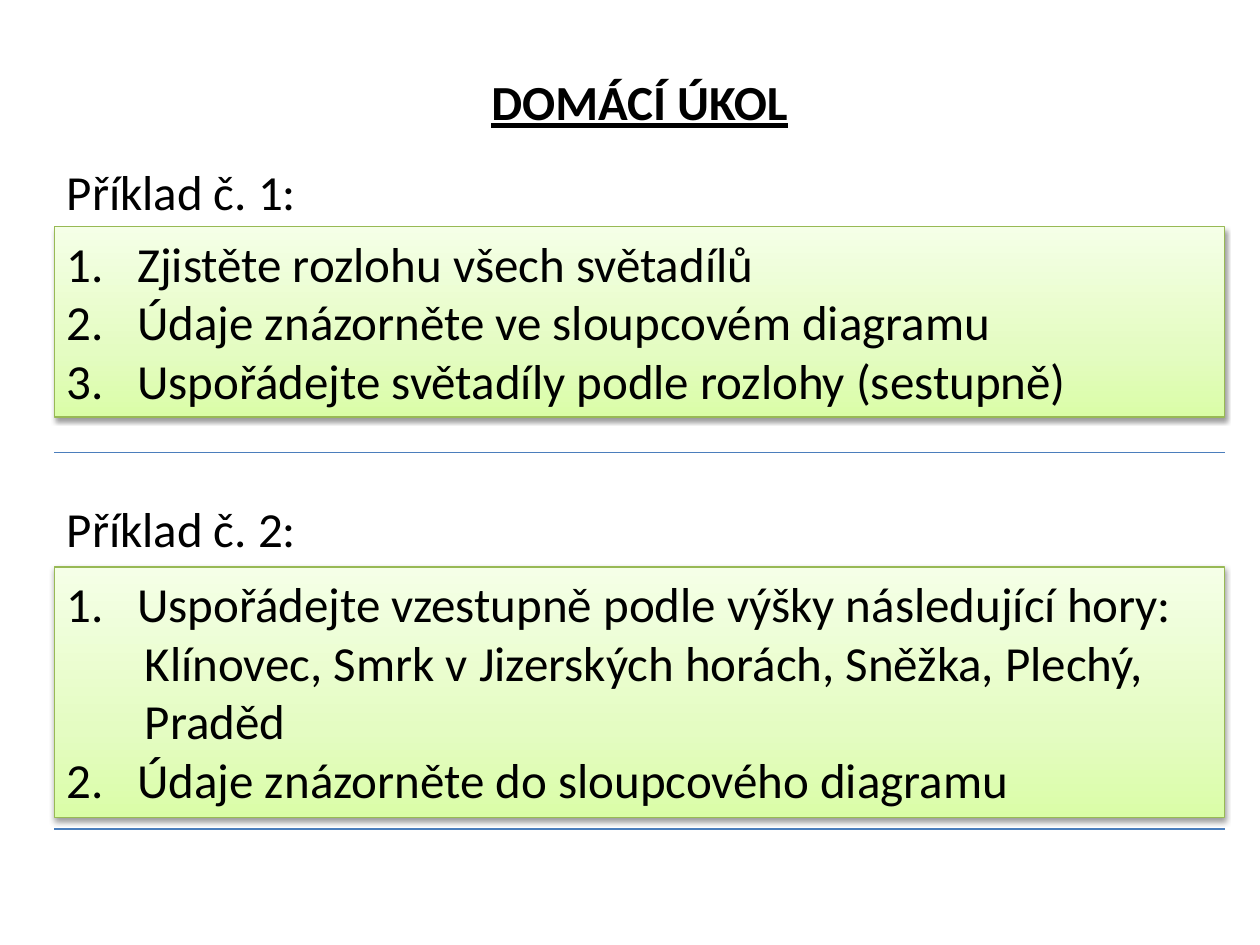
from copy import deepcopy

from lxml.etree import SubElement
from pptx import Presentation
from pptx.dml.color import RGBColor
from pptx.enum.shapes import MSO_CONNECTOR as Connector
from pptx.enum.text import MSO_ANCHOR as Anchor, MSO_AUTO_SIZE as AutoSize, PP_ALIGN as Align
from pptx.oxml.ns import qn
from pptx.util import Inches, Pt

# Content: each task line is (number or None, text)
TITLE = "DOMÁCÍ ÚKOL"
EXERCISES = [
    {
        "label": "Příklad č. 1:", "label_top": 1.23, "top": 1.8, "height": 1.51, "rule": 3.59,
        "tasks": [
            (1, "Zjistěte rozlohu všech světadílů"),
            (2, "Údaje znázorněte ve sloupcovém diagramu"),
            (3, "Uspořádejte světadíly podle rozlohy (sestupně)"),
        ],
    },
    {
        "label": "Příklad č. 2:", "label_top": 3.91, "top": 4.5, "height": 1.99, "rule": 6.58,
        "tasks": [
            (1, "Uspořádejte vzestupně podle výšky následující hory:"),
            (None, "Klínovec, Smrk v Jizerských horách, Sněžka, Plechý,"),
            (None, "Praděd"),
            (2, "Údaje znázorněte do sloupcového diagramu"),
        ],
    },
]

THEME = {
    "font": "Calibri",
    "size": 28,
    "text": "000000",
    "gradient": [(0, "DAFDA7"), (0.35, "E4FCC2"), (1, "F5FFE7")],
    "border": "98B955",
    "rule": "4B7EBC",
    "line_width": 0.75,
}
LEFT, WIDTH, LINE_HEIGHT = 0.43, 9.29, 0.57
NUMBER_INDENT, DETAIL_INDENT = 0.56, 0.62


def set_indent(paragraph, number):
    """Number the paragraph with a hanging indent, or indent it plainly."""
    properties = paragraph._p.get_or_add_pPr()
    indent = DETAIL_INDENT if number is None else NUMBER_INDENT
    properties.set("marL", str(Inches(indent)))
    properties.set("indent", str(0 if number is None else -Inches(indent)))
    if number is None:
        SubElement(properties, qn("a:buNone"))
    else:
        SubElement(properties, qn("a:buAutoNum"), type="arabicPeriod", startAt=str(number))


def write_text(shape, lines, top, height, align=Align.LEFT, bold=False, underline=False):
    """Place a placeholder and fill it with (number, text) lines or one string."""
    shape.left, shape.top = Inches(LEFT), Inches(top)
    shape.width, shape.height = Inches(WIDTH), Inches(height)
    frame = shape.text_frame
    frame.word_wrap = True
    frame.auto_size = AutoSize.NONE
    frame.vertical_anchor = Anchor.TOP
    is_list = not isinstance(lines, str)
    for index, (number, text) in enumerate(lines if is_list else [(None, lines)]):
        paragraph = frame.add_paragraph() if index else frame.paragraphs[0]
        paragraph.alignment = align
        paragraph.space_before = Pt(0)
        if is_list:
            set_indent(paragraph, number)
        run = paragraph.add_run()
        run.text = text
        font = run.font
        font.name, font.size = THEME["font"], Pt(THEME["size"])
        font.bold, font.underline = bold, underline
        font.color.rgb = RGBColor.from_string(THEME["text"])


def style_line(line, color):
    line.color.rgb = RGBColor.from_string(color)
    line.width = Pt(THEME["line_width"])


def style_panel(shape):
    """Give a panel its vertical gradient, border and soft shadow."""
    fill = shape.fill
    fill.gradient()
    fill.gradient_angle = 90
    stop_list = shape._element.spPr.find(qn("a:gradFill")).find(qn("a:gsLst"))
    stop_list.append(deepcopy(stop_list[-1]))
    for stop, (position, color) in zip(fill.gradient_stops, THEME["gradient"]):
        stop.position = position
        stop.color.rgb = RGBColor.from_string(color)
    style_line(shape.line, THEME["border"])

    shape.shadow.inherit = False
    effects = shape._element.spPr.find(qn("a:effectLst"))
    shadow = SubElement(effects, qn("a:outerShdw"), blurRad=str(Pt(3.1)), dist=str(Pt(1.6)),
                        dir="5400000", rotWithShape="0")
    shadow_color = SubElement(shadow, qn("a:srgbClr"), val="000000")
    SubElement(shadow_color, qn("a:alpha"), val="38000")


def add_rule(slide, top):
    rule = slide.shapes.add_connector(Connector.STRAIGHT, Inches(LEFT), Inches(top),
                                      Inches(LEFT + WIDTH), Inches(top))
    style_line(rule.line, THEME["rule"])
    SubElement(rule._element.spPr, qn("a:effectLst"))


def main():
    presentation = Presentation()
    presentation.slide_width, presentation.slide_height = Inches(10), Inches(7.5)
    # The comparison layout has a title and two pairs of label and list
    slide = presentation.slides.add_slide(presentation.slide_layouts[4])
    title, *bodies = slide.placeholders

    # Title
    write_text(title, TITLE, 0.52, LINE_HEIGHT, align=Align.CENTER, bold=True, underline=True)

    # Exercises: label, panel of tasks, closing rule
    for exercise, label, panel in zip(EXERCISES, bodies[::2], bodies[1::2]):
        write_text(label, exercise["label"], exercise["label_top"], LINE_HEIGHT)
        write_text(panel, exercise["tasks"], exercise["top"], exercise["height"])
        style_panel(panel)
        add_rule(slide, exercise["rule"])

    presentation.save("out.pptx")


if __name__ == "__main__":
    main()
